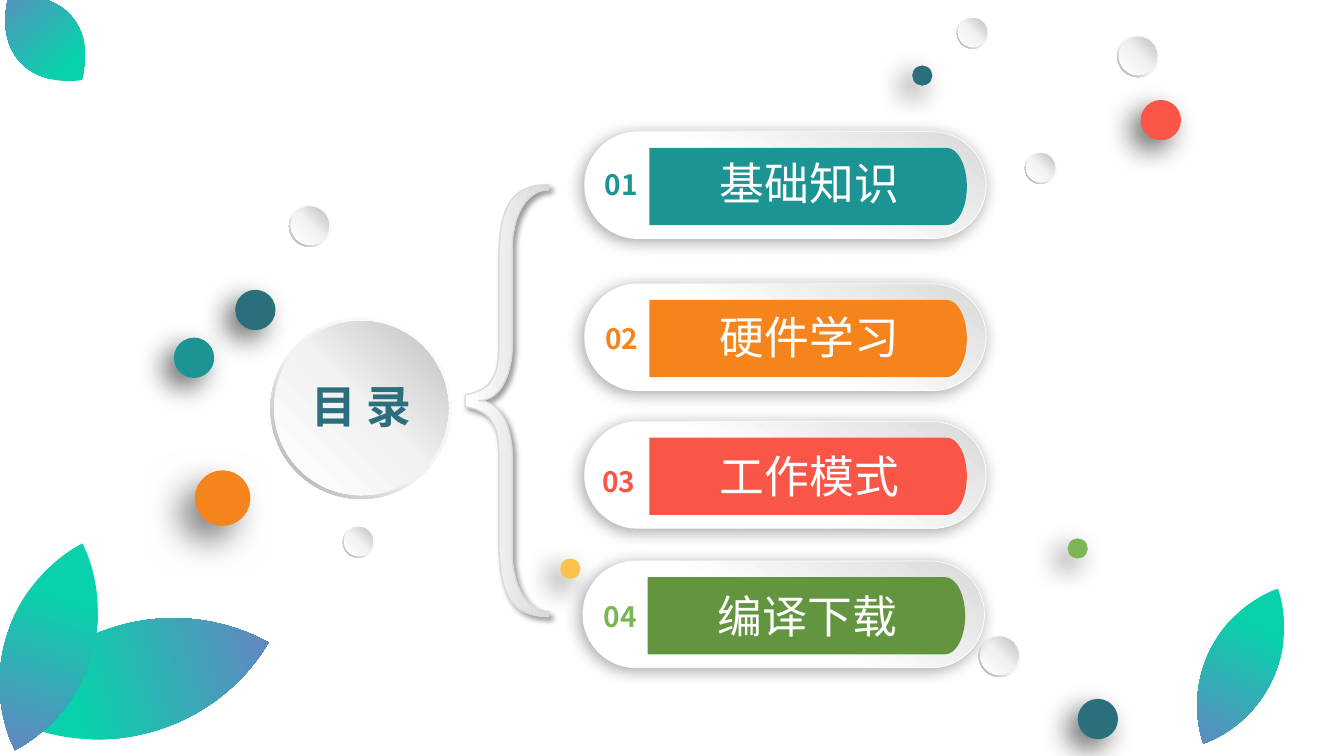
"""Build the contents slide: a hub disc, a brace, four chapter pills and loose decorations."""
from dataclasses import dataclass
from typing import Optional

from lxml.etree import SubElement
from pptx import Presentation
from pptx.dml.color import RGBColor
from pptx.enum.shapes import MSO_SHAPE as Shp
from pptx.enum.text import MSO_AUTO_SIZE as Fit, PP_ALIGN as Align
from pptx.oxml import parse_xml
from pptx.oxml.ns import nsdecls, qn
from pptx.util import Emu, Pt

COLS, ROWS = 16, 9
CELL = 762000
FONT = "Noto Sans CJK SC"

WHITE = RGBColor(0xFF, 0xFF, 0xFF)
MIST = RGBColor(0xF2, 0xF2, 0xF2)
SILVER = RGBColor(0xD9, 0xD9, 0xD9)
GREY = RGBColor(0xBF, 0xBF, 0xBF)
DARK_GREY = RGBColor(0xA6, 0xA6, 0xA6)
BLACK = RGBColor(0x00, 0x00, 0x00)
TEAL = RGBColor(0x1C, 0x94, 0x94)
PETROL = RGBColor(0x2B, 0x6F, 0x7D)
ORANGE = RGBColor(0xF5, 0x84, 0x1C)
CORAL = RGBColor(0xF9, 0x56, 0x47)
YELLOW = RGBColor(0xFA, 0xC1, 0x4D)
LIME = RGBColor(0x7C, 0xB5, 0x54)
GREEN = RGBColor(0x63, 0x95, 0x41)
MINT = RGBColor(0x09, 0xD1, 0xAB)
VIOLET = RGBColor(0x6E, 0x7D, 0xC3)

Edge = list[list[tuple[float, float]]]


@dataclass(frozen=True)
class Gradient:
    stops: tuple[tuple[int, RGBColor], ...]
    angle: int


@dataclass(frozen=True)
class Shadow:
    alpha: int
    blur: int
    dist: int
    angle: int = 135


@dataclass(frozen=True)
class Leaf:
    cx: float
    cy: float
    w: float
    h: float
    turn: float


@dataclass(frozen=True)
class Button:
    x: float
    y: float
    size: float
    inset: float = 0.04
    disc: float = 0.91


@dataclass(frozen=True)
class Dot:
    x: float
    y: float
    size: float
    color: RGBColor
    shadow: Shadow = Shadow(60, 20, 10)


@dataclass(frozen=True)
class Chapter:
    x: float
    y: float
    number: str
    title: str
    band: RGBColor
    ink: RGBColor
    number_dx: float
    number_dy: float
    title_dy: float


RING_FILL = Gradient(((0, WHITE), (55, MIST), (100, DARK_GREY)), 135)
DISC_FILL = Gradient(((0, WHITE), (51, MIST), (100, GREY)), 315)
PILL_FILL = Gradient(((45, WHITE), (100, SILVER)), 300)
BRACE_FILL = Gradient(((0, WHITE), (100, SILVER)), 0)
LEAF_FILL = Gradient(((0, MINT), (31, MINT), (100, VIOLET)), 90)

LEAVES = [Leaf(1.61, 8.08, 1.32, 3.29, 254.8), Leaf(0.58, 7.7, 1.03, 2.59, 18.1),
          Leaf(14.77, 7.93, 0.82, 2.05, 25.7), Leaf(0.54, 0.46, 0.82, 1.32, 138.3)]
HUB = Button(3.22, 3.78, 2.16, 0.02, 0.96)
BUTTONS = [HUB, Button(11.39, 0.2, 0.38), Button(13.3, 0.42, 0.5), Button(4.08, 6.26, 0.38),
           Button(12.2, 1.81, 0.38), Button(11.65, 7.56, 0.5), Button(3.44, 2.44, 0.5)]
DOTS = [Dot(13.58, 1.19, 0.48, CORAL), Dot(10.86, 0.78, 0.24, PETROL),
        Dot(2.8, 3.45, 0.48, PETROL), Dot(6.67, 6.65, 0.24, YELLOW),
        Dot(2.32, 5.6, 0.66, ORANGE, Shadow(50, 25, 15)), Dot(12.83, 8.32, 0.48, PETROL),
        Dot(2.07, 4.02, 0.48, TEAL), Dot(12.71, 6.41, 0.24, LIME)]
CHAPTERS = [Chapter(6.96, 1.57, "01", "基础知识", TEAL, TEAL, 0.11, 0.37, 0.23),
            Chapter(6.96, 3.38, "02", "硬件学习", ORANGE, ORANGE, 0.12, 0.39, 0.25),
            Chapter(6.96, 5.02, "03", "工作模式", CORAL, CORAL, 0.08, 0.45, 0.26),
            Chapter(6.94, 6.68, "04", "编译下载", GREEN, LIME, 0.12, 0.4, 0.27)]

LEAF_EDGE: Edge = [[(0, -1)], [(0.16, -0.93)], [(0.66, -0.69), (1, -0.37), (1, 0)]]
BAND_EDGE: Edge = [[(0, 0)], [(3.54, 0)], [(3.67, 0), (3.78, 0.2), (3.78, 0.46)]]
BRACE_EDGE: Edge = [
    [(5.54, 4.7)], [(5.7, 4.67), (5.81, 4.61), (5.86, 4.51)],
    [(5.92, 4.43), (5.94, 4.27), (5.94, 4.06)], [(5.94, 3.08)],
    [(5.94, 2.75), (5.99, 2.52), (6.08, 2.39)], [(6.17, 2.26), (6.32, 2.2), (6.53, 2.2)],
    [(6.53, 2.26)], [(6.3, 2.26), (6.12, 2.51), (6.1, 2.9)], [(6.1, 4.1)],
    [(6.1, 4.4), (5.99, 4.77), (5.7, 4.77)]]


def grid(*cells: float) -> list[Emu]:
    return [Emu(round(c * CELL)) for c in cells]


def mirror(edge: Edge, x: Optional[float] = None, y: Optional[float] = None) -> Edge:
    """Extend an edge that ends on an axis by its reflection, run backwards."""
    back = [[*reversed(seg[:-1]), prev[-1]] for prev, seg in zip(edge, edge[1:])]
    return edge + [[(px if x is None else 2 * x - px, py if y is None else 2 * y - py)
                    for px, py in seg] for seg in reversed(back)]


def add_outline(shapes, edge: Edge, x: float = 0, y: float = 0, sx: float = 1, sy: float = 1):
    """Draw a closed outline of lines and cubic curves, shifted and scaled on the grid."""
    segs = [[grid(x + px * sx, y + py * sy) for px, py in seg] for seg in edge]
    builder = shapes.build_freeform(*segs[0][0])
    builder.add_line_segments([seg[-1] for seg in segs[1:]], close=True)
    sp = builder.convert_to_shape()
    for seg, line in zip(segs[1:], list(sp.element.iter(qn("a:lnTo")))):
        if len(seg) == 3:
            pts = "".join(f'<a:pt x="{px - sp.left}" y="{py - sp.top}"/>' for px, py in seg)
            line.getparent().replace(line, parse_xml(
                f'<a:cubicBezTo {nsdecls("a")}>{pts}</a:cubicBezTo>'))
    return sp


def style(sp, fill, line: Optional[tuple[RGBColor, float]] = None,
          shadow: Optional[Shadow] = None) -> None:
    if isinstance(fill, Gradient):
        sp.fill.gradient()
        old = sp.element.spPr.find(qn("a:gradFill"))
        stops = "".join(f'<a:gs pos="{p * 1000}"><a:srgbClr val="{c}"/></a:gs>'
                        for p, c in fill.stops)
        old.getparent().replace(old, parse_xml(
            f'<a:gradFill {nsdecls("a")} rotWithShape="1"><a:gsLst>{stops}</a:gsLst>'
            f'<a:lin ang="{fill.angle * 60000}" scaled="0"/></a:gradFill>'))
    else:
        sp.fill.solid()
        sp.fill.fore_color.rgb = fill
    if line:
        sp.line.color.rgb, sp.line.width = line[0], Pt(line[1])
    else:
        sp.line.fill.background()
    sp.shadow.inherit = False
    if shadow:
        sp.element.spPr.find(qn("a:effectLst")).append(parse_xml(
            f'<a:outerShdw {nsdecls("a")} blurRad="{Pt(shadow.blur)}" dist="{Pt(shadow.dist)}" '
            f'dir="{shadow.angle * 60000}" algn="ctr" rotWithShape="0"><a:srgbClr val="{BLACK}">'
            f'<a:alpha val="{shadow.alpha * 1000}"/></a:srgbClr></a:outerShdw>'))


def add_preset(shapes, kind: Shp, x: float, y: float, w: float, h: float,
               adj: Optional[float] = None):
    sp = shapes.add_shape(kind, *grid(x, y, w, h))
    if adj is not None:
        sp.adjustments[0] = adj
    return sp


def add_text(shapes, x: float, y: float, w: float, h: float, text: str, size: int,
             color: RGBColor, bold: bool = False, wrap: bool = True, tight: bool = False) -> None:
    tf = shapes.add_textbox(*grid(x, y, w, h)).text_frame
    tf.word_wrap, tf.auto_size = wrap, Fit.SHAPE_TO_FIT_TEXT
    if tight:
        tf.margin_left = tf.margin_right = tf.margin_top = tf.margin_bottom = 0
    p = tf.paragraphs[0]
    p.alignment = Align.CENTER
    r = p.add_run()
    r.text = text
    r.font.size, r.font.bold, r.font.name = Pt(size), bold, FONT
    r.font.color.rgb = color
    SubElement(r.font._element, qn("a:ea"), typeface=FONT)


def add_leaf(shapes, leaf: Leaf) -> None:
    unit = mirror(mirror(LEAF_EDGE, y=0), x=0)
    sp = add_outline(shapes, unit, leaf.cx, leaf.cy, leaf.w / 2, leaf.h / 2)
    sp.rotation = leaf.turn
    style(sp, LEAF_FILL)


def add_button(shapes, b: Button) -> None:
    style(add_preset(shapes, Shp.DONUT, b.x, b.y, b.size, b.size, 0.05), RING_FILL)
    gap, disc = b.size * b.inset, b.size * b.disc
    style(add_preset(shapes, Shp.OVAL, b.x + gap, b.y + gap, disc, disc), DISC_FILL)


def add_chapter(shapes, c: Chapter) -> None:
    style(add_preset(shapes, Shp.ROUNDED_RECTANGLE, c.x, c.y, 4.78, 1.27, 0.5),
          PILL_FILL, (WHITE, 0.5), Shadow(34, 12, 3))
    style(add_outline(shapes, mirror(BAND_EDGE, y=0.46), c.x + 0.77, c.y + 0.19), c.band)
    add_text(shapes, c.x + c.number_dx, c.y + c.number_dy, 0.65, 0.53, c.number, 20, c.ink,
             bold=True, wrap=False)
    add_text(shapes, c.x + 1.35, c.y + c.title_dy, 2.65, 0.77, c.title, 32, WHITE)


def main() -> None:
    prs = Presentation()
    prs.slide_width, prs.slide_height = grid(COLS, ROWS)
    shapes = prs.slides.add_slide(prs.slide_layouts[6]).shapes
    for leaf in LEAVES:
        add_leaf(shapes, leaf)
    for dot in DOTS:
        style(add_preset(shapes, Shp.OVAL, dot.x, dot.y, dot.size, dot.size), dot.color,
              shadow=dot.shadow)
    for button in BUTTONS:
        add_button(shapes, button)
    add_text(shapes, 3.36, 4.51, 1.88, 0.65, "目 录", 32, PETROL, bold=True, tight=True)
    style(add_outline(shapes, mirror(BRACE_EDGE, y=4.77)), BRACE_FILL, (SILVER, 1),
          Shadow(40, 4, 3, 45))
    for chapter in CHAPTERS:
        add_chapter(shapes, chapter)
    prs.save("out.pptx")


if __name__ == "__main__":
    main()
